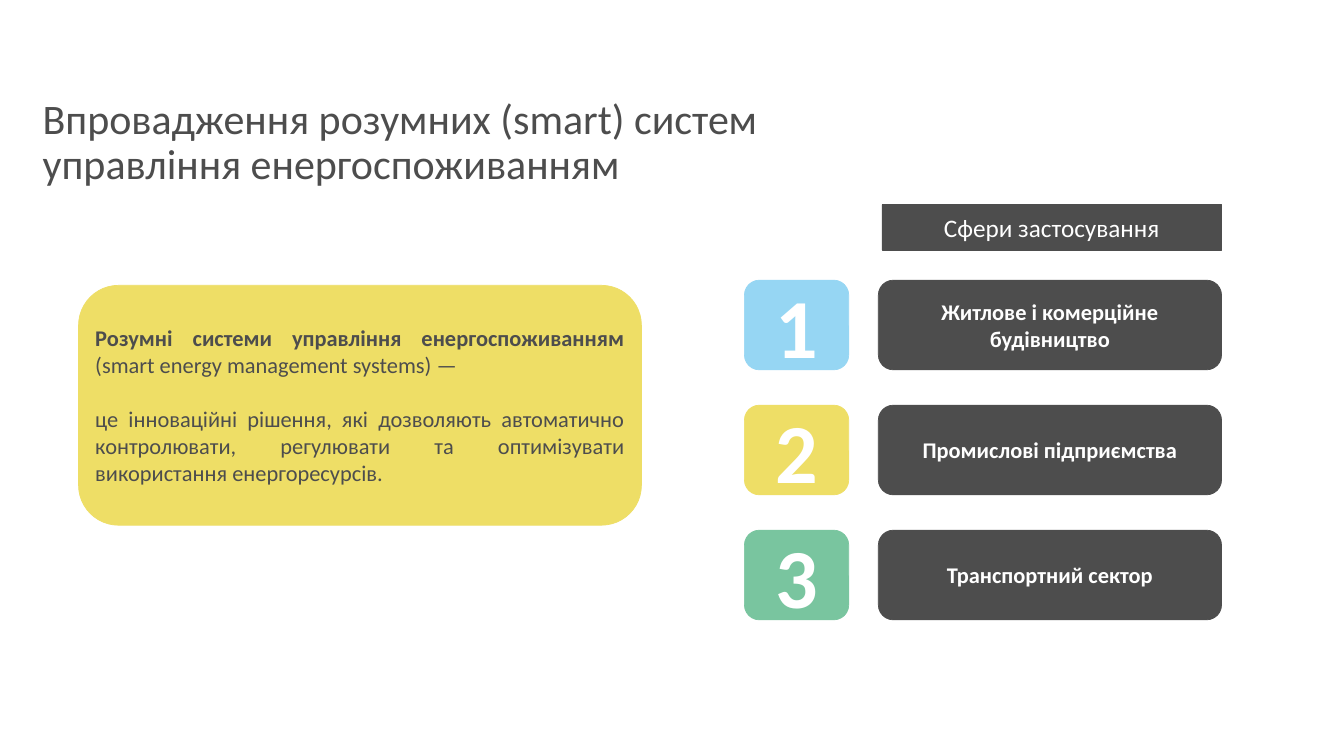
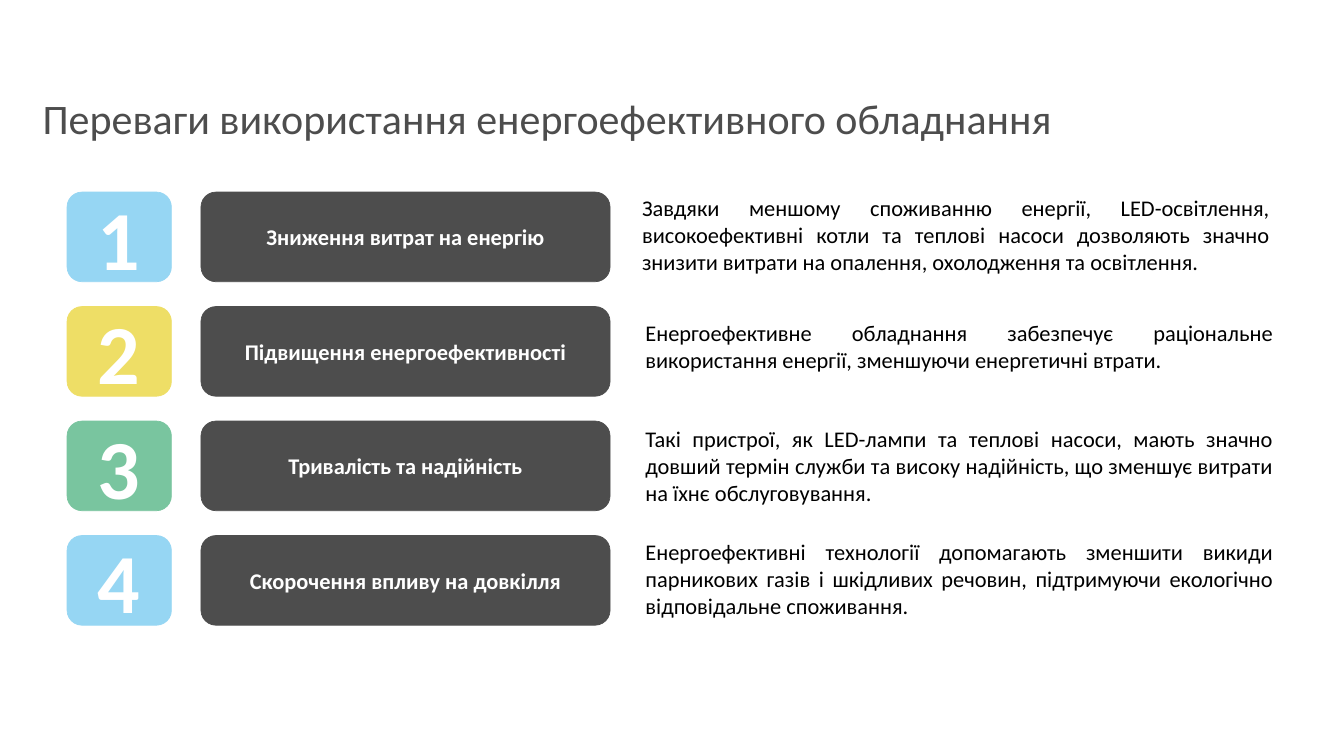
from itertools import cycle

from pptx import Presentation
from pptx.dml.color import RGBColor
from pptx.enum import shapes, text
from pptx.util import Cm, Pt

FONT = "Calibri"
DARK = RGBColor(0x4D, 0x4D, 0x4D)
WHITE = RGBColor(0xFF, 0xFF, 0xFF)
BLACK = RGBColor(0x00, 0x00, 0x00)
BLUE = RGBColor(0x96, 0xD6, 0xF3)
YELLOW = RGBColor(0xEE, 0xDE, 0x66)
GREEN = RGBColor(0x79, 0xC5, 0x9F)
BADGE_COLORS = (BLUE, YELLOW, GREEN)

TITLE_SIZE, HEADER_SIZE, BODY_SIZE, NUMBER_SIZE = 60, 36, 32, 120
BADGE_W, ROW_H, LABEL_OFFSET = 5.26, 4.52, 6.75

RECT = shapes.MSO_SHAPE.RECTANGLE
ROUNDED = shapes.MSO_SHAPE.ROUNDED_RECTANGLE
CENTER = text.PP_ALIGN.CENTER
JUSTIFY = text.PP_ALIGN.JUSTIFY

AREAS = (
    "Житлове і комерційне будівництво",
    "Промислові підприємства",
    "Транспортний сектор",
)

BENEFITS = (
    "Зниження витрат на енергію",
    "Підвищення енергоефективності",
    "Тривалість та надійність",
    "Скорочення впливу на довкілля",
)

# left, top, height in cm, then the wording
EXPLANATIONS = (
    (32.11, 9.68, 4.37,
     "Завдяки меншому споживанню енергії, LED-освітлення, високоефективні "
     "котли та теплові насоси дозволяють значно знизити витрати на опалення, "
     "охолодження та освітлення."),
    (32.28, 15.98, 3.0,
     "Енергоефективне обладнання забезпечує раціональне використання енергії, "
     "зменшуючи енергетичні втрати."),
    (32.28, 21.31, 4.37,
     "Такі пристрої, як LED-лампи та теплові насоси, мають значно довший "
     "термін служби та високу надійність, що зменшує витрати на їхнє "
     "обслуговування."),
    (32.28, 27.0, 4.37,
     "Енергоефективні технології допомагають зменшити викиди парникових газів "
     "і шкідливих речовин, підтримуючи екологічно відповідальне споживання."),
)


def add_run(p, wording, size, color, bold=False):
    r = p.add_run()
    r.text = wording
    r.font.name = FONT
    r.font.size = Pt(size)
    r.font.bold = bold
    r.font.color.rgb = color


def add_text(s, left, top, width, height, wording, size, color):
    """Add a wrapping text box and return its text frame."""
    box = s.shapes.add_textbox(Cm(left), Cm(top), Cm(width), Cm(height))
    tf = box.text_frame
    tf.word_wrap = True
    add_run(tf.paragraphs[0], wording, size, color)
    return tf


def add_title(s, wording, width):
    tf = add_text(s, 1.9, 4.83, width, 2.29, wording, TITLE_SIZE, DARK)
    tf.paragraphs[0].line_spacing = 0.9


def add_panel(s, kind, left, top, width, height, color):
    """Add a filled shape and return its vertically centred text frame."""
    sp = s.shapes.add_shape(kind, Cm(left), Cm(top), Cm(width), Cm(height))
    sp.shadow.inherit = False
    sp.fill.solid()
    sp.fill.fore_color.rgb = color
    sp.line.color.rgb = color
    sp.line.width = Pt(1)
    tf = sp.text_frame
    tf.word_wrap = True
    tf.vertical_anchor = text.MSO_ANCHOR.MIDDLE
    return tf


def add_caption(tf, wording, size, bold=True):
    p = tf.paragraphs[0]
    p.alignment = CENTER
    add_run(p, wording, size, WHITE, bold)


def add_numbered_rows(s, labels, left, top, pitch, label_width):
    """Stack numbered badges, each with a dark label beside it."""
    for i, (label, color) in enumerate(zip(labels, cycle(BADGE_COLORS))):
        y = top + i * pitch
        badge = add_panel(s, ROUNDED, left, y, BADGE_W, ROW_H, color)
        add_caption(badge, str(i + 1), NUMBER_SIZE)
        panel = add_panel(s, ROUNDED, left + LABEL_OFFSET, y,
                          label_width, ROW_H, DARK)
        add_caption(panel, label, BODY_SIZE)


def add_definition(s):
    tf = add_panel(s, ROUNDED, 3.96, 14.38, 28.37, 12.09, YELLOW)
    term = tf.paragraphs[0]
    add_run(term, "Розумні системи управління енергоспоживанням ",
            BODY_SIZE, DARK, bold=True)
    add_run(term, "(smart energy management systems) —", BODY_SIZE, DARK)
    meaning = tf.add_paragraph()
    meaning.space_before = Pt(39)
    add_run(meaning,
            "це інноваційні рішення, які дозволяють автоматично контролювати, "
            "регулювати та оптимізувати використання енергоресурсів.",
            BODY_SIZE, DARK)
    for p in tf.paragraphs:
        p.alignment = JUSTIFY


def build_smart_systems(s):
    add_title(s, "Впровадження розумних (smart) систем "
                 "управління енергоспоживанням", 46.58)
    header = add_panel(s, RECT, 44.45, 10.31, 17.12, 2.29, DARK)
    add_caption(header, "Сфери застосування", HEADER_SIZE, bold=False)
    add_definition(s)
    add_numbered_rows(s, AREAS, 37.52, 14.12, 6.3, 17.3)


def build_benefits(s):
    add_title(s, "Переваги використання енергоефективного обладнання", 53.7)
    add_numbered_rows(s, BENEFITS, 3.38, 9.68, 5.77, 20.62)
    for left, top, height, wording in EXPLANATIONS:
        tf = add_text(s, left, top, 32.16, height, wording, BODY_SIZE, BLACK)
        tf.auto_size = text.MSO_AUTO_SIZE.SHAPE_TO_FIT_TEXT
        tf.paragraphs[0].alignment = JUSTIFY


def main():
    prs = Presentation()
    prs.slide_width, prs.slide_height = Cm(67.74), Cm(38.1)
    blank = prs.slide_layouts[6]
    for build in (build_smart_systems, build_benefits):
        build(prs.slides.add_slide(blank))
    prs.save("out.pptx")


if __name__ == "__main__":
    main()
